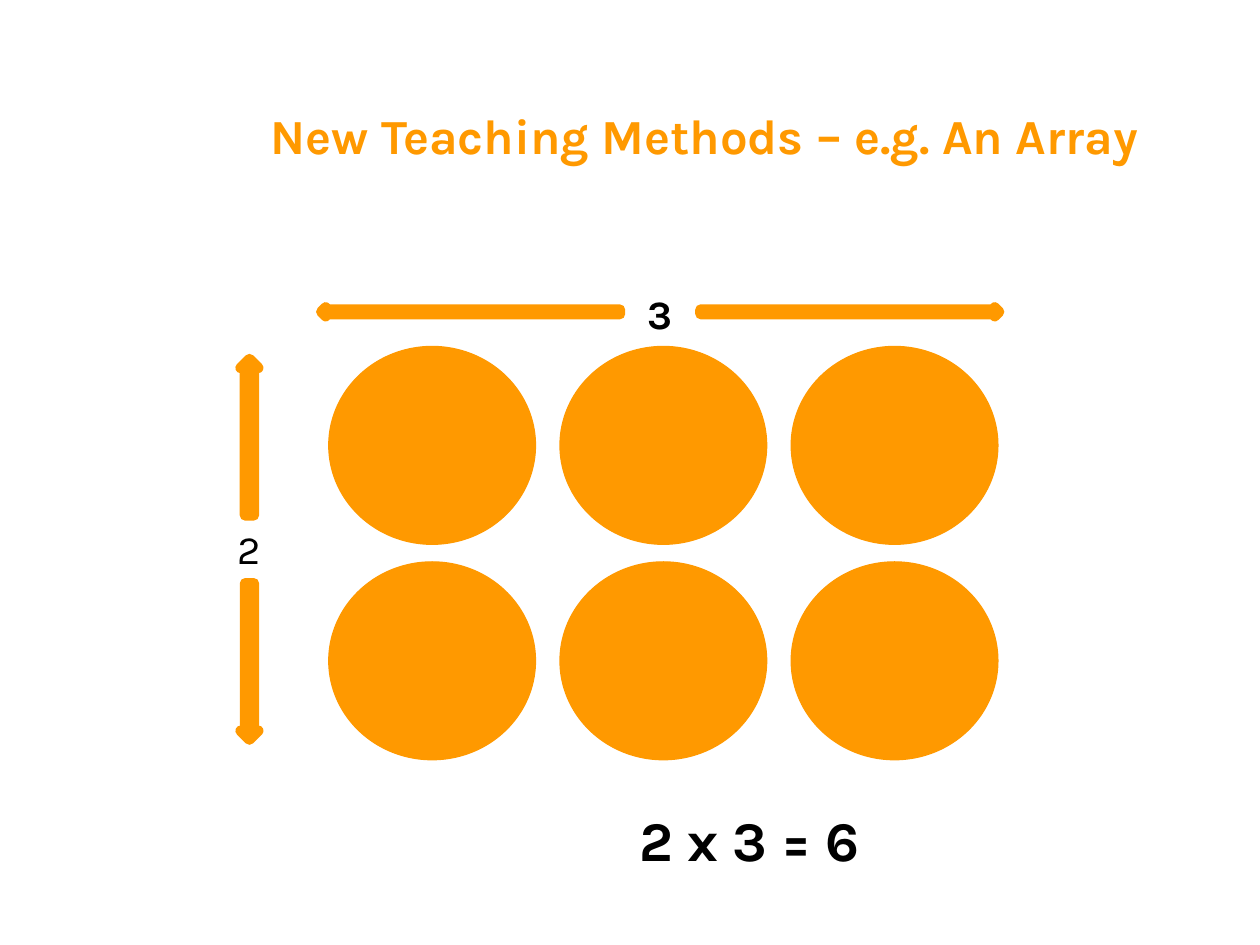
from pptx import Presentation
from pptx.dml.color import RGBColor
from pptx.enum.shapes import MSO_SHAPE as Shape
from pptx.enum.text import MSO_ANCHOR as Anchor, MSO_AUTO_SIZE as AutoSize, PP_ALIGN as Align
from pptx.util import Inches, Pt

ORANGE = "FF9900"
BLACK = "000000"


def paint(shape, color, line_width):
    shape.shadow.inherit = False
    shape.fill.solid()
    shape.fill.fore_color.rgb = RGBColor.from_string(color)
    shape.line.color.rgb = RGBColor.from_string(color)
    shape.line.width = Pt(line_width)


def write(frame, text, size, color, bold, align):
    frame.text = text
    para = frame.paragraphs[0]
    para.alignment = align
    font = para.runs[0].font
    font.name = "Karla"
    font.size = Pt(size)
    font.bold = bold
    font.color.rgb = RGBColor.from_string(color)


deck = Presentation()
deck.slide_width = Inches(10)
deck.slide_height = Inches(7.5)
page = deck.slides.add_slide(deck.slide_layouts[5])

title = page.shapes.title
title.left, title.top = Inches(2.05), Inches(0.65)
title.width, title.height = Inches(7.61), Inches(0.84)
frame = title.text_frame
frame.margin_left = frame.margin_right = Inches(0.1)
frame.margin_top = frame.margin_bottom = Inches(0.1)
frame.vertical_anchor = Anchor.MIDDLE
frame.auto_size = AutoSize.NONE
write(frame, "New Teaching Methods – e.g. An Array", 28, ORANGE, True, Align.LEFT)

for row in range(2):
    for column in range(3):
        counter = page.shapes.add_shape(
            Shape.OVAL,
            Inches(2.61 + column * 1.835), Inches(2.75 + row * 1.71),
            Inches(1.64), Inches(1.57),
        )
        paint(counter, ORANGE, 0.75)

arrows = [
    (5.56, 2.44, 2.37, 0.07, 0),
    (2.55, 2.44, 2.37, 0.07, 180),
    (1.36, 5.18, 1.24, 0.14, 90),
    (1.36, 3.4, 1.24, 0.14, 270),
]
for left, top, width, height, rotation in arrows:
    arrow = page.shapes.add_shape(
        Shape.RIGHT_ARROW, Inches(left), Inches(top), Inches(width), Inches(height)
    )
    arrow.rotation = rotation
    paint(arrow, ORANGE, 6)

labels = [
    ("2 x 3 = 6", 4.41, 6.34, 3.08, 0.64, 32, True, True, Align.CENTER),
    ("3", 5.04, 2.25, 0.39, 0.49, 23, True, False, Align.LEFT),
    ("2", 1.79, 4.11, 0.37, 0.49, 23, False, False, Align.LEFT),
]
for text, left, top, width, height, size, bold, wrap, align in labels:
    box = page.shapes.add_textbox(Inches(left), Inches(top), Inches(width), Inches(height))
    box.text_frame.word_wrap = wrap
    box.text_frame.auto_size = AutoSize.SHAPE_TO_FIT_TEXT
    write(box.text_frame, text, size, BLACK, bold, align)

deck.save("out.pptx")
